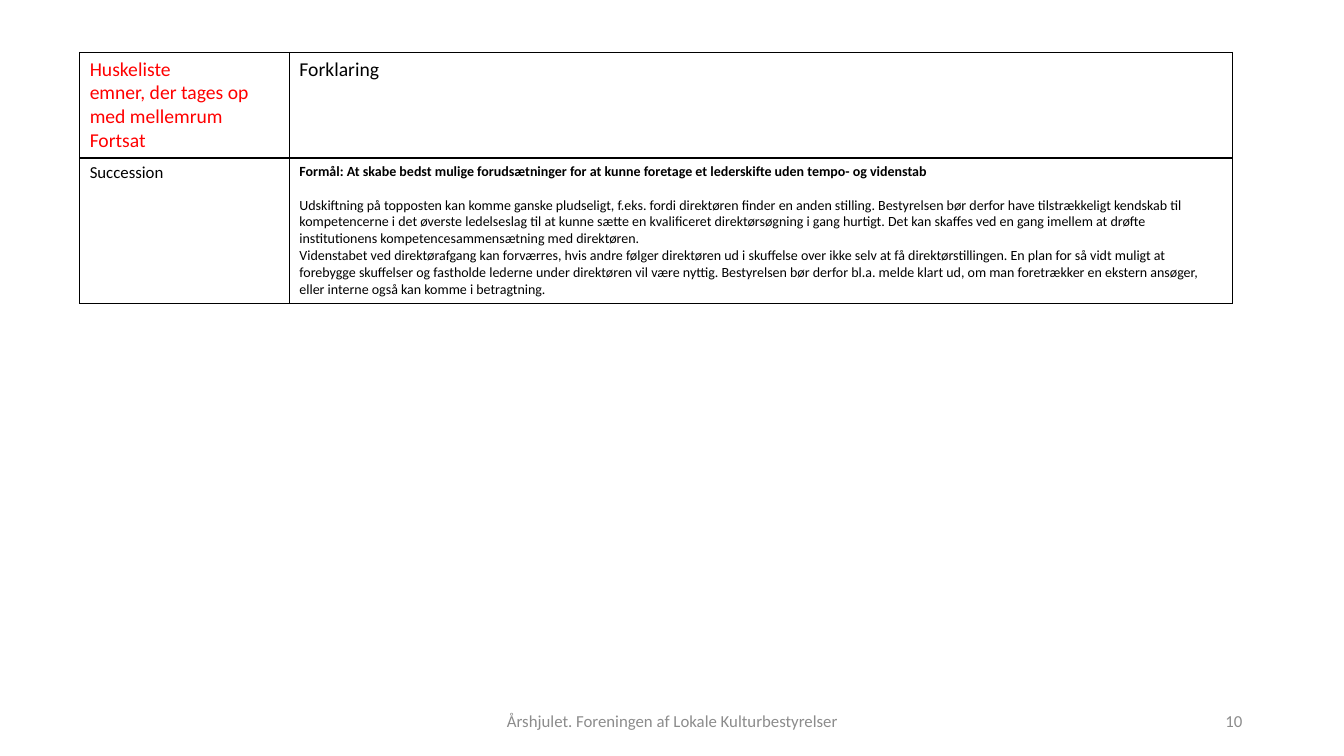
from lxml.etree import SubElement
from pptx import Presentation
from pptx.dml.color import RGBColor
from pptx.enum.text import MSO_ANCHOR, PP_ALIGN
from pptx.oxml.ns import qn
from pptx.util import Inches, Pt


def color(code):
    return RGBColor.from_string(code)


class Deck:
    """Holds the style and the current slide."""

    face = "Calibri"
    black = "000000"
    red = "FF0000"
    gray = "8C8C8C"

    def __init__(self, wide, high):
        self.show = Presentation()
        self.show.slide_width = Inches(wide)
        self.show.slide_height = Inches(high)
        self.slide = self.show.slides.add_slide(self.show.slide_layouts[6])

    def text(self, frame, lines, size, tint, align=PP_ALIGN.LEFT):
        frame.word_wrap = True
        frame.text = "\n".join(lines)
        for para in frame.paragraphs:
            para.alignment = align
            para.font.name = self.face
            para.font.size = Pt(size)
            para.font.bold = False
            para.font.color.rgb = color(tint)

    def label(self, left, top, wide, high, words, align):
        box = self.slide.shapes.add_textbox(
            Inches(left), Inches(top), Inches(wide), Inches(high))
        box.text_frame.vertical_anchor = MSO_ANCHOR.MIDDLE
        self.text(box.text_frame, [words], 12, self.gray, align)

    def border(self, cell):
        props = cell._tc.get_or_add_tcPr()
        for index, side in enumerate(("a:lnL", "a:lnR", "a:lnT", "a:lnB")):
            line = SubElement(props, qn(side), w=str(Pt(1)))
            fill = SubElement(line, qn("a:solidFill"))
            SubElement(fill, qn("a:srgbClr"), val=self.black)
            props.insert(index, line)

    def table(self, left, top, cols, rows, cells):
        table = self.slide.shapes.add_table(
            len(rows), len(cols), Inches(left), Inches(top),
            Inches(sum(cols)), Inches(sum(rows))).table
        table.first_row = table.horz_banding = False
        for col, wide in zip(table.columns, cols):
            col.width = Inches(wide)
        for row, high in zip(table.rows, rows):
            row.height = Inches(high)
        for cell, (lines, size, tint) in zip(table.iter_cells(), cells):
            cell.fill.background()
            self.border(cell)
            self.text(cell.text_frame, lines, size, tint)
        return table


def main():
    deck = Deck(13.33, 7.5)
    topics = ["Huskeliste", "emner, der tages op med mellemrum", "Fortsat"]
    advice = [
        "Formål: At skabe bedst mulige forudsætninger for at kunne foretage "
        "et lederskifte uden tempo- og videnstab",
        "Udskiftning på topposten kan komme ganske pludseligt, f.eks. fordi "
        "direktøren finder en anden stilling. Bestyrelsen bør derfor have "
        "tilstrækkeligt kendskab til kompetencerne i det øverste ledelseslag "
        "til at kunne sætte en kvalificeret direktørsøgning i gang hurtigt. "
        "Det kan skaffes ved en gang imellem at drøfte institutionens "
        "kompetencesammensætning med direktøren.",
        "Videnstabet ved direktørafgang kan forværres, hvis andre følger "
        "direktøren ud i skuffelse over ikke selv at få direktørstillingen. "
        "En plan for så vidt muligt at forebygge skuffelser og fastholde "
        "lederne under direktøren vil være nyttig. Bestyrelsen bør derfor "
        "bl.a. melde klart ud, om man foretrækker en ekstern ansøger, eller "
        "interne også kan komme i betragtning.",
    ]
    table = deck.table(0.79, 0.52, [2.08, 9.35], [1.04, 1.43], [
        (topics, 14, deck.red),
        (["Forklaring"], 14, deck.black),
        (["Succession"], 12, deck.black),
        (advice, 10, deck.black),
    ])
    goal = table.cell(1, 1).text_frame.paragraphs[0]
    goal.font.bold = True
    goal.space_after = Pt(12)
    deck.label(4.42, 6.95, 4.5, 0.4,
               "Årshjulet. Foreningen af Lokale Kulturbestyrelser",
               PP_ALIGN.CENTER)
    deck.label(9.42, 6.95, 3, 0.4, "10", PP_ALIGN.RIGHT)
    deck.show.save("out.pptx")


if __name__ == "__main__":
    main()
